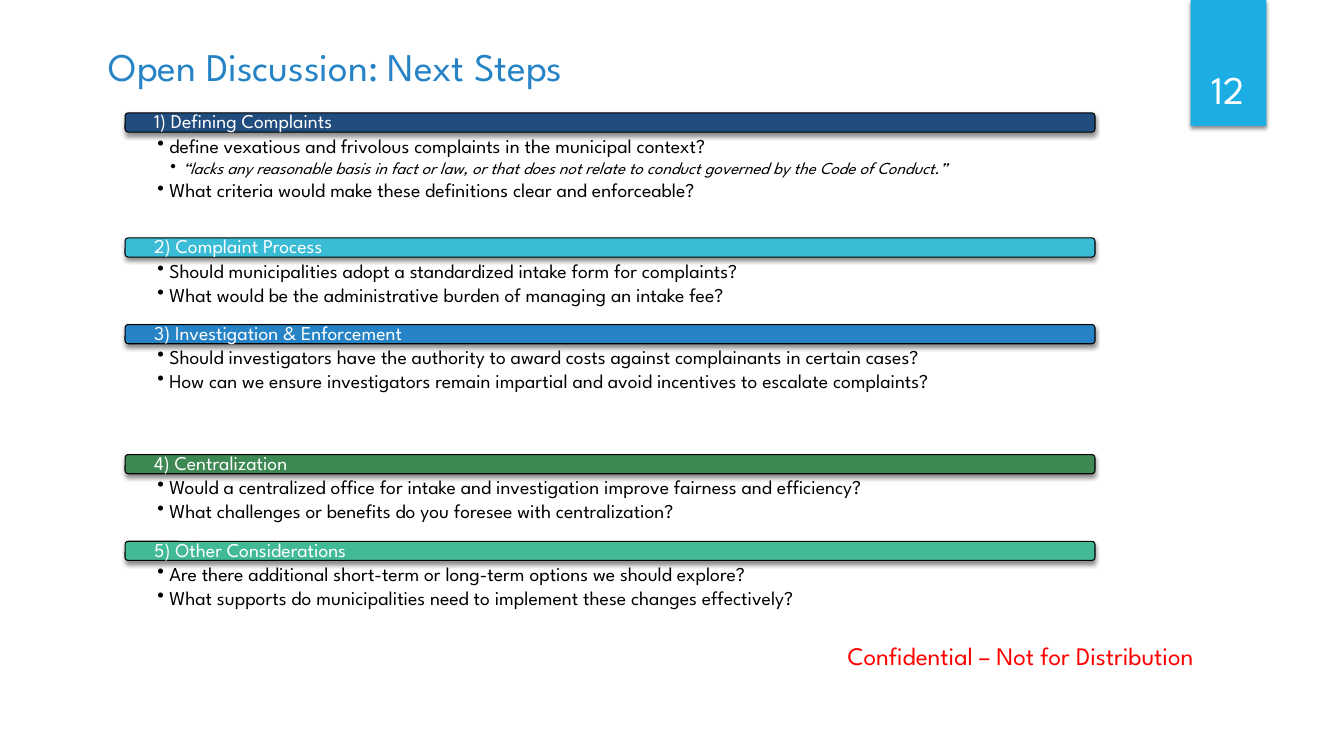
"""Build the discussion slide on next steps for complaint handling."""
from dataclasses import dataclass
from typing import NamedTuple

from lxml.etree import SubElement as Sub
from pptx import Presentation as Deck
from pptx.dml.color import RGBColor as Color
from pptx.enum.shapes import MSO_SHAPE as Kind
from pptx.enum.text import MSO_ANCHOR as Anchor, PP_ALIGN as Align
from pptx.oxml.ns import qn
from pptx.shapes.autoshape import Shape
from pptx.slide import Slide
from pptx.text.text import TextFrame as Frame, _Paragraph as Para
from pptx.util import Emu, Pt

SCALE = 9144


@dataclass(frozen=True)
class Theme:
    face: str = "League Spartan"
    title: str = "2683C6"
    badge: str = "1CADE4"
    light: str = "FFFFFF"
    dark: str = "000000"
    alert: str = "FF0000"
    head: int = 28
    note: int = 18
    text: int = 14
    small: int = 12


class Box(NamedTuple):
    left: int
    top: int
    width: int
    height: int


class Point(NamedTuple):
    text: str
    sub: bool = False


class Topic(NamedTuple):
    name: str
    fill: str
    top: int
    height: int
    points: tuple[Point, ...]


THEME = Theme()
TOPICS = (
    Topic("1) Defining Complaints", "214C7E", 112, 112, (
        Point("define vexatious and frivolous complaints in the municipal context?"),
        Point("“lacks any reasonable basis in fact or law, or that does not relate to "
              "conduct governed by the Code of Conduct.”", True),
        Point("What criteria would make these definitions clear and enforceable?"),
    )),
    Topic("2) Complaint Process", "3ABCD6", 236, 72, (
        Point("Should municipalities adopt a standardized intake form for complaints?"),
        Point("What would be the administrative burden of managing an intake fee?"),
    )),
    Topic("3) Investigation & Enforcement", "2683C6", 322, 116, (
        Point("Should investigators have the authority to award costs against "
              "complainants in certain cases?"),
        Point("How can we ensure investigators remain impartial and avoid incentives "
              "to escalate complaints?"),
    )),
    Topic("4) Centralization", "3E8853", 451, 72, (
        Point("Would a centralized office for intake and investigation improve "
              "fairness and efficiency?"),
        Point("What challenges or benefits do you foresee with centralization?"),
    )),
    Topic("5) Other Considerations", "42BA97", 537, 72, (
        Point("Are there additional short-term or long-term options we should explore?"),
        Point("What supports do municipalities need to implement these changes "
              "effectively?"),
    )),
)


def px(size: int) -> Emu:
    return Emu(size * SCALE)


def write(para: Para, text: str, size: int, color: str, slant: bool = False) -> None:
    run = para.add_run()
    run.text = text
    font = run.font
    font.name, font.size, font.italic = THEME.face, Pt(size), slant
    font.color.rgb = Color.from_string(color)


def inset(frame: Frame, left: int, top: int, right: int, base: int) -> None:
    frame.margin_left, frame.margin_top = px(left), px(top)
    frame.margin_right, frame.margin_bottom = px(right), px(base)
    frame.word_wrap = True


def label(slide: Slide, box: Box) -> Frame:
    frame = slide.shapes.add_textbox(*map(px, box)).text_frame
    inset(frame, 10, 5, 10, 5)
    return frame


def block(slide: Slide, kind: Kind, box: Box, fill: str) -> Shape:
    shape = slide.shapes.add_shape(kind, *map(px, box))
    shape.fill.solid()
    shape.fill.fore_color.rgb = Color.from_string(fill)
    shape.line.fill.background()
    shape.shadow.inherit = False
    list_ = shape.element.spPr.find(qn("a:effectLst"))
    shade = Sub(list_, qn("a:outerShdw"), blurRad=str(Pt(3)), dist=str(Pt(2)),
                dir="5400000", algn="ctr", rotWithShape="0")
    tint = Sub(shade, qn("a:srgbClr"), val=THEME.dark)
    Sub(tint, qn("a:alpha"), val="45000")
    return shape


def bullet(para: Para, point: Point) -> None:
    para.level = 2 if point.sub else 1
    para.line_spacing = 0.9
    para.space_after = Pt(2)
    props = para._p.get_or_add_pPr()
    props.set("marL", str(px(25 if point.sub else 12)))
    props.set("indent", str(px(-12)))
    Sub(props, qn("a:buChar"), char="•")
    size = THEME.small if point.sub else THEME.text
    write(para, point.text, size, THEME.dark, point.sub)


def draw_topic(slide: Slide, topic: Topic) -> None:
    body = label(slide, Box(78, topic.top + 9, 1008, topic.height))
    inset(body, 78, 14, 78, 11)
    for rank, point in enumerate(topic.points):
        bullet(body.add_paragraph() if rank else body.paragraphs[0], point)

    bar = block(slide, Kind.ROUNDED_RECTANGLE, Box(124, topic.top, 962, 19), topic.fill)
    bar.line.color.rgb = Color.from_string(THEME.dark)
    bar.line.width = Pt(0.75)
    frame = bar.text_frame
    inset(frame, 28, 0, 28, 0)
    frame.vertical_anchor = Anchor.MIDDLE
    para = frame.paragraphs[0]
    para.alignment = Align.LEFT
    para.line_spacing = 0.9
    write(para, topic.name, THEME.text, THEME.light)


def draw_title(slide: Slide, text: str) -> None:
    title = slide.shapes.title
    title.left, title.top, title.width, title.height = map(px, Box(49, 27, 1077, 77))
    frame = title.text_frame
    inset(frame, 59, 5, 10, 5)
    frame.vertical_anchor = Anchor.MIDDLE
    para = frame.paragraphs[0]
    para.alignment = Align.LEFT
    write(para, text, THEME.head, THEME.title)


def draw_badge(slide: Slide, text: str) -> None:
    block(slide, Kind.RECTANGLE, Box(1181, 0, 75, 125), THEME.badge)
    frame = label(slide, Box(1172, 32, 92, 84))
    frame.vertical_anchor = Anchor.BOTTOM
    para = frame.paragraphs[0]
    para.alignment = Align.CENTER
    write(para, text, THEME.head, THEME.light)


def main() -> None:
    deck = Deck()
    deck.slide_width, deck.slide_height = px(1333), px(750)
    slide = deck.slides.add_slide(deck.slide_layouts[5])
    draw_badge(slide, "12")
    draw_title(slide, "Open Discussion: Next Steps")
    note = label(slide, Box(831, 630, 433, 40))
    write(note.paragraphs[0], "Confidential – Not for Distribution", THEME.note, THEME.alert)
    for topic in TOPICS:
        draw_topic(slide, topic)
    deck.save("out.pptx")


if __name__ == "__main__":
    main()
